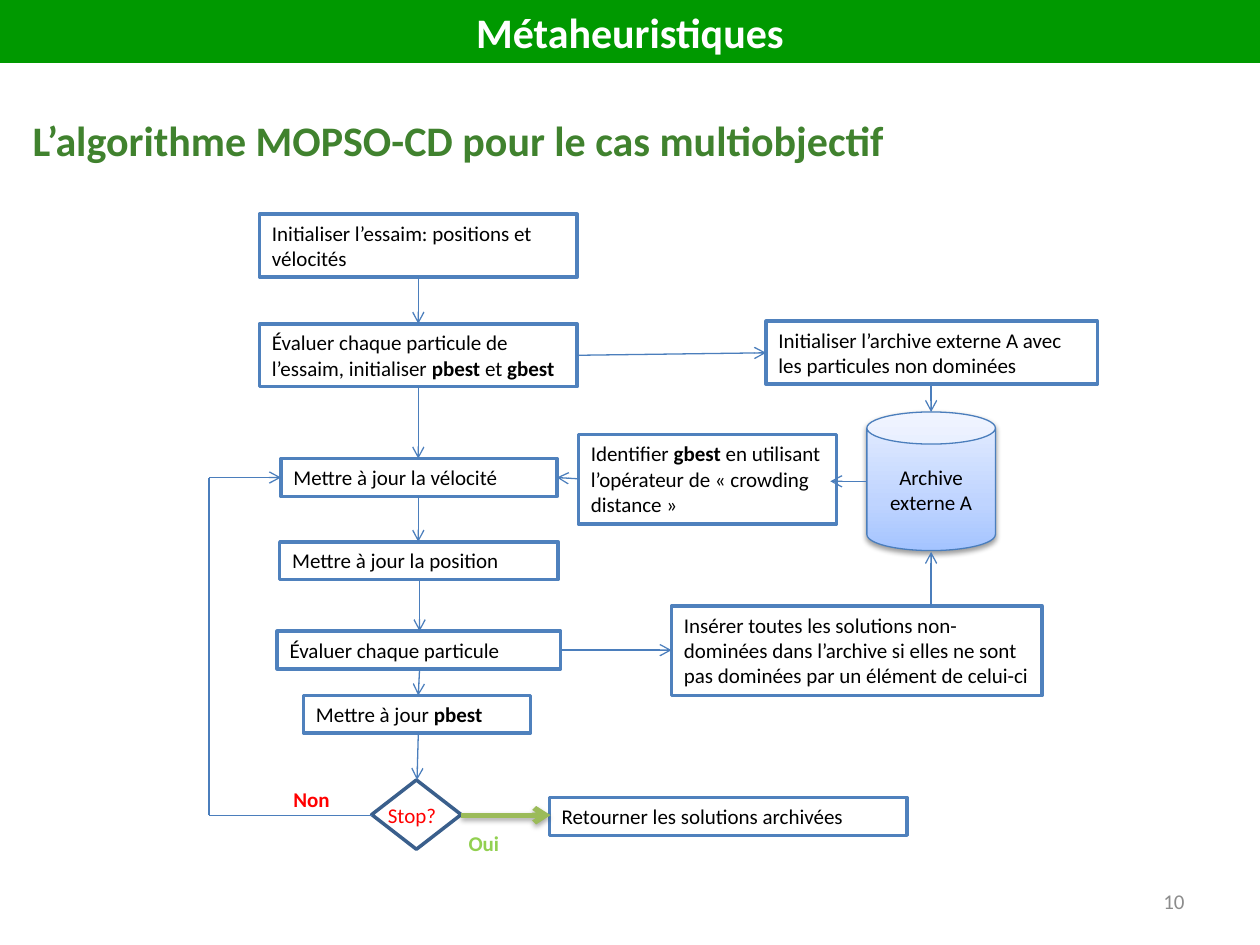
import pptx
import pptx.util
import pptx.dml.color
import pptx.enum.shapes
import pptx.enum.text
import pptx.oxml.ns
from lxml import etree

Inches = pptx.util.Inches
Pt = pptx.util.Pt
qn = pptx.oxml.ns.qn
Kind = pptx.enum.shapes.MSO_SHAPE
Align = pptx.enum.text.PP_ALIGN
Anchor = pptx.enum.text.MSO_ANCHOR
Auto = pptx.enum.text.MSO_AUTO_SIZE

HUES = {
    "white": "FFFFFF", "black": "000000", "edge": "4F81BD", "flow": "4B7EBC",
    "dark": "3A5F8C", "red": "FF0000", "lime": "92D050", "olive": "9BBB59",
    "bar": "009900", "title": "40822E", "gray": "8C8C8C",
}
FADE = [(0, "A4C4FF"), (35, "BFD4FF"), (100, "E6EEFF")]

# Process steps: left, top, width, height, text (bold between asterisks)
STEPS = [
    (2.06, 1.7, 2.52, 0.5, "Initialiser l’essaim: positions et vélocités"),
    (2.06, 2.57, 2.52, 0.5,
     "Évaluer chaque particule de l’essaim, initialiser *pbest* et *gbest*"),
    (6.08, 2.55, 2.63, 0.5,
     "Initialiser l’archive externe A avec les particules non dominées"),
    (4.59, 3.45, 2.05, 0.71,
     "Identifier *gbest* en utilisant l’opérateur de « crowding distance »"),
    (2.23, 3.64, 2.19, 0.3, "Mettre à jour la vélocité"),
    (2.22, 4.3, 2.21, 0.3, "Mettre à jour la position"),
    (2.2, 5.01, 2.25, 0.3, "Évaluer chaque particule"),
    (2.41, 5.52, 1.8, 0.3, "Mettre à jour *pbest*"),
    (5.33, 4.81, 2.94, 0.71,
     "Insérer toutes les solutions non-dominées dans l’archive si elles "
     "ne sont pas dominées par un élément de celui-ci"),
    (4.36, 6.33, 2.84, 0.3, "Retourner les solutions archivées"),
]

# Arrows: from x, y to x, y
FLOWS = [
    (3.32, 2.21, 3.32, 2.57), (3.32, 3.07, 3.32, 3.64),
    (3.32, 3.94, 3.32, 4.3), (3.33, 4.61, 3.33, 5.01),
    (3.33, 5.31, 3.32, 5.52), (3.32, 5.83, 3.31, 6.19),
    (4.45, 5.16, 5.33, 5.16), (7.39, 4.81, 7.39, 4.38),
    (6.88, 3.82, 6.59, 3.82), (4.59, 3.8, 4.42, 3.79),
    (4.58, 2.82, 6.08, 2.8), (7.39, 3.06, 7.39, 3.27),
]
LOOP = [(2.95, 6.47), (1.66, 6.47), (1.66, 3.79), (2.23, 3.79)]


def color(name):
    return pptx.dml.color.RGBColor.from_string(HUES[name])


def write(shape, text, hue="black", size=12, bold=False, align=Align.LEFT,
          anchor=Anchor.TOP, wrap=True, grow=True):
    frame = shape.text_frame
    frame.word_wrap = wrap
    frame.auto_size = Auto.SHAPE_TO_FIT_TEXT if grow else Auto.NONE
    frame.vertical_anchor = anchor
    para = frame.paragraphs[0]
    para.alignment = align
    for i, part in enumerate(text.split("*")):
        if part:
            run = para.add_run()
            run.text = part
            run.font.name = "Calibri"
            run.font.size = Pt(size)
            run.font.bold = bold or i % 2 == 1
            run.font.color.rgb = color(hue)


def add_form(slide, kind, area, fill=None, edge=None, width=2):
    shape = slide.shapes.add_shape(kind, *map(Inches, area))
    shape.shadow.inherit = False
    if fill:
        shape.fill.solid()
        shape.fill.fore_color.rgb = color(fill)
    else:
        shape.fill.background()
    if edge:
        shape.line.color.rgb = color(edge)
        shape.line.width = Pt(width)
    else:
        shape.line.fill.background()
    return shape


def add_label(slide, area, text, **style):
    box = slide.shapes.add_textbox(*map(Inches, area))
    write(box, text, **style)


def add_line(slide, ends, hue="flow", width=0.75, head=True):
    line = slide.shapes.add_connector(
        pptx.enum.shapes.MSO_CONNECTOR.STRAIGHT, *map(Inches, ends))
    line.line.color.rgb = color(hue)
    line.line.width = Pt(width)
    props = line._element.spPr
    if head:
        etree.SubElement(props.find(qn("a:ln")), qn("a:tailEnd"), type="arrow")
    etree.SubElement(props, qn("a:effectLst"))
    return line


def add_shade(shape, dist, alpha):
    effects = shape._element.spPr.find(qn("a:effectLst"))
    shade = etree.SubElement(
        effects, qn("a:outerShdw"), blurRad=str(Pt(3.1)), dist=str(Pt(dist)),
        dir="5400000", rotWithShape="0")
    tint = etree.SubElement(shade, qn("a:srgbClr"), val=HUES["black"])
    etree.SubElement(tint, qn("a:alpha"), val=str(alpha * 1000))


def add_store(slide):
    can = add_form(slide, Kind.CAN, (6.88, 3.27, 1.02, 1.1), None, "flow", 0.75)
    can.fill.gradient()
    can.fill.gradient_angle = 90
    stops = can._element.spPr.find(qn("a:gradFill")).find(qn("a:gsLst"))
    for stop in list(stops):
        stops.remove(stop)
    for place, hue in FADE:
        stop = etree.SubElement(stops, qn("a:gs"), pos=str(place * 1000))
        etree.SubElement(stop, qn("a:srgbClr"), val=hue)
    add_shade(can, 1.6, 38)
    write(can, "Archive externe A", align=Align.CENTER, anchor=Anchor.MIDDLE,
          grow=False)


def main():
    deck = pptx.Presentation()
    deck.slide_width, deck.slide_height = Inches(10), Inches(7.5)
    slide = deck.slides.add_slide(deck.slide_layouts[6])

    # Steps and archive
    for *area, text in STEPS:
        write(add_form(slide, Kind.RECTANGLE, area, "white", "edge"), text)
    add_store(slide)

    # Stop test and its two exits
    add_form(slide, Kind.FLOWCHART_DECISION, (2.95, 6.19, 0.71, 0.55),
             None, "dark")
    add_label(slide, (2.98, 6.32, 0.59, 0.3), "Stop?", hue="red", wrap=False)
    add_label(slide, (3.62, 6.54, 0.49, 0.3), "Oui", hue="lime", bold=True,
              wrap=False)
    add_label(slide, (2.23, 6.19, 0.53, 0.3), "Non", hue="red", bold=True,
              wrap=False)
    add_shade(add_line(slide, (3.66, 6.47, 4.37, 6.47), "olive", 3), 1.8, 35)

    # Arrows and the loop back
    for ends in FLOWS:
        add_line(slide, ends)
    for start, end in zip(LOOP, LOOP[1:]):
        add_line(slide, start + end, head=end == LOOP[-1])

    # Banner, heading and page number
    bar = add_form(slide, Kind.RECTANGLE, (0, 0, 10, 0.5), "bar")
    write(bar, "Métaheuristiques", "white", 24, True, Align.CENTER)
    add_label(slide, (0.16, 0.86, 9.52, 0.5),
              "L’algorithme MOPSO-CD pour le cas multiobjectif",
              hue="title", size=24, bold=True)
    add_label(slide, (7.17, 6.95, 2.33, 0.4), "10", hue="gray",
              align=Align.RIGHT, anchor=Anchor.MIDDLE, grow=False)

    deck.save("out.pptx")


if __name__ == "__main__":
    main()
